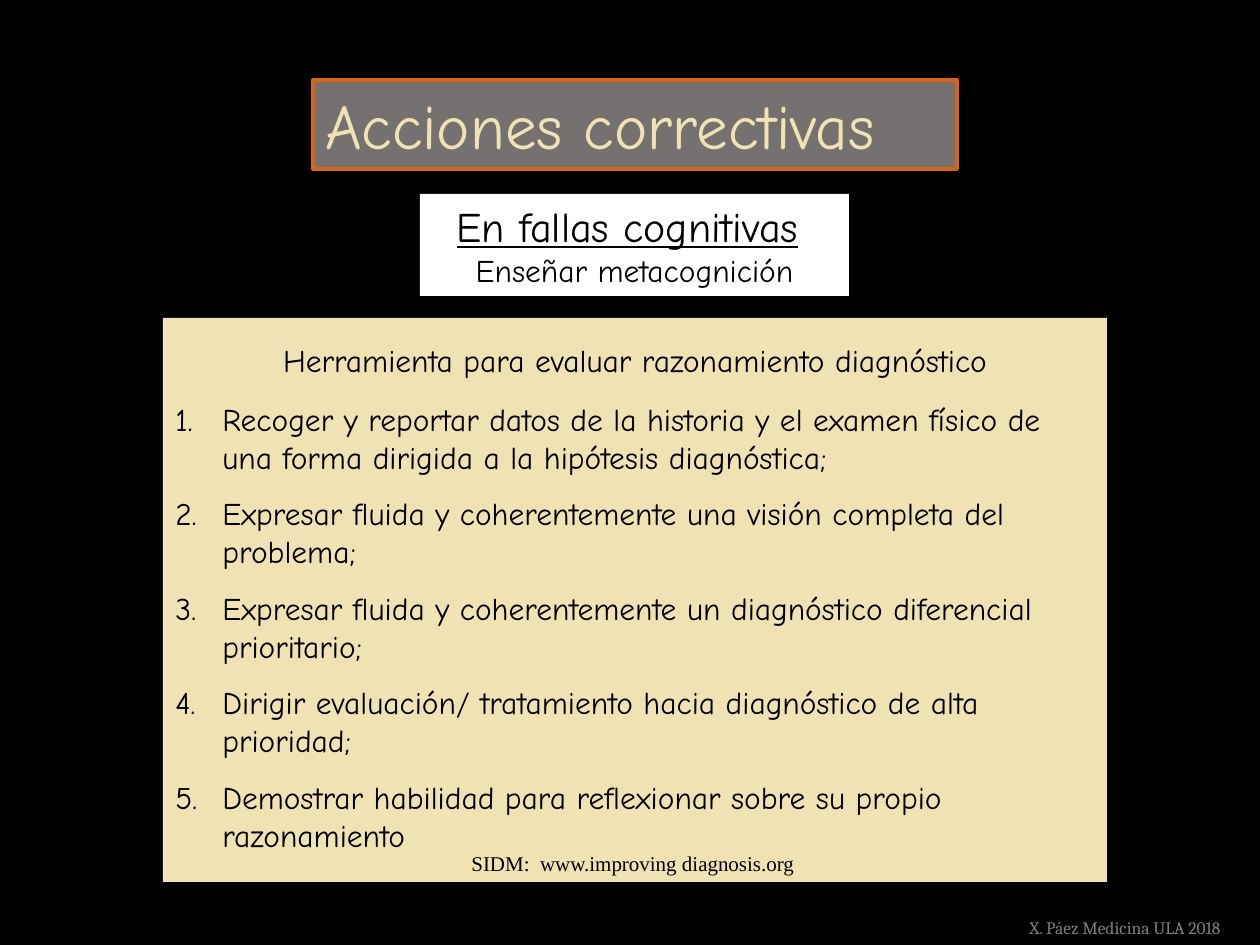
from dataclasses import dataclass

from lxml import etree
from pptx import Presentation
from pptx.dml.color import RGBColor
from pptx.enum.shapes import MSO_SHAPE
from pptx.enum.text import MSO_ANCHOR, PP_ALIGN
from pptx.oxml.ns import qn
from pptx.util import Pt

RECTANGLE = MSO_SHAPE.RECTANGLE
TOP = MSO_ANCHOR.TOP
LEFT, CENTER = PP_ALIGN.LEFT, PP_ALIGN.CENTER
PX = 914400 / 126  # EMU in one pixel


@dataclass(frozen=True)
class Theme:
    background: str = "000000"
    ink: str = "000000"
    paper: str = "FFFFFF"
    cream: str = "EFE2B3"
    banner: str = "767171"
    orange: str = "DB6413"
    muted: str = "808080"
    hand: str = "Comic Neue"
    serif: str = "Times New Roman"
    footer: str = "Cambria"
    title_size: int = 36
    heading_size: int = 24
    body_size: int = 18
    source_size: int = 12
    footer_size: int = 10


def px(length):
    return round(length * PX)


def color(value):
    return RGBColor.from_string(value)


def add_text(paragraph, text, *, font, size, ink, underline=False, align=LEFT, before=0):
    paragraph.alignment = align
    paragraph.space_before = Pt(before)
    run = paragraph.add_run()
    run.text = text
    run.font.name = font
    run.font.size = Pt(size)
    run.font.color.rgb = color(ink)
    run.font.underline = underline


def number(paragraph, indent):
    properties = paragraph._p.get_or_add_pPr()
    properties.set("marL", str(px(indent)))
    properties.set("indent", str(-px(indent)))
    etree.SubElement(properties, qn("a:buAutoNum"), type="arabicPeriod")


class SlideBuilder:
    def __init__(self, slide, theme):
        self.slide = slide
        self.theme = theme
        fill = slide.background.fill
        fill.solid()
        fill.fore_color.rgb = color(theme.background)

    def panel(self, left, top, width, height, fill, line=None, wrap=True):
        shape = self.slide.shapes.add_shape(
            RECTANGLE, px(left), px(top), px(width), px(height))
        shape.shadow.inherit = False
        shape.fill.solid()
        shape.fill.fore_color.rgb = color(fill)
        if line:
            shape.line.color.rgb = color(line)
            shape.line.width = Pt(2.25)
        else:
            shape.line.fill.background()
        frame = shape.text_frame
        frame.word_wrap = wrap
        frame.vertical_anchor = TOP
        return frame

    def label(self, left, top, width, height, text, **style):
        box = self.slide.shapes.add_textbox(px(left), px(top), px(width), px(height))
        box.text_frame.word_wrap = True
        add_text(box.text_frame.paragraphs[0], text, **style)

    def numbered_list(self, frame, items, indent, gaps, **style):
        for item, gap in zip(items, gaps):
            paragraph = frame.add_paragraph()
            add_text(paragraph, item, before=gap, **style)
            number(paragraph, indent)


def main():
    theme = Theme()
    presentation = Presentation()
    presentation.slide_width = px(1260)
    presentation.slide_height = px(945)
    slide = presentation.slides.add_slide(presentation.slide_layouts[6])
    builder = SlideBuilder(slide, theme)
    body = {"font": theme.hand, "size": theme.body_size, "ink": theme.ink}

    # Topic box
    topic = builder.panel(420, 194, 429, 102, theme.paper, wrap=False)
    heading = topic.paragraphs[0]
    heading_style = {**body, "size": theme.heading_size, "align": CENTER}
    add_text(heading, "En fallas cognitivas", underline=True, **heading_style)
    add_text(heading, " ", **heading_style)
    add_text(topic.add_paragraph(), "Enseñar metacognición", align=CENTER, **body)

    # Assessment tool with its numbered steps
    tool = builder.panel(163, 318, 944, 564, theme.cream)
    tool.margin_top = px(23)
    add_text(tool.paragraphs[0], "Herramienta para evaluar razonamiento diagnóstico",
             align=CENTER, **body)
    steps = [
        "Recoger y reportar datos de la historia y el examen físico de una forma "
        "dirigida a la hipótesis diagnóstica;",
        "Expresar fluida y coherentemente una visión completa del problema;",
        "Expresar fluida y coherentemente un diagnóstico diferencial prioritario;",
        "Dirigir evaluación/ tratamiento hacia diagnóstico de alta prioridad;",
        "Demostrar habilidad para reflexionar sobre su propio razonamiento",
    ]
    gaps = [12] + [10.8] * (len(steps) - 1)
    builder.numbered_list(tool, steps, 47, gaps, **body)

    # Footer
    builder.label(1017, 911, 243, 34, "X. Páez Medicina ULA 2018",
                  font=theme.footer, size=theme.footer_size, ink=theme.muted)

    # Title banner
    title = builder.panel(313, 80, 644, 89, theme.banner, line=theme.orange)
    add_text(title.paragraphs[0], "Acciones correctivas",
             font=theme.hand, size=theme.title_size, ink=theme.cream)

    # Source
    builder.label(459, 844, 352, 38, "SIDM:  www.improving diagnosis.org",
                  font=theme.serif, size=theme.source_size, ink=theme.ink)

    presentation.save("out.pptx")


if __name__ == "__main__":
    main()
